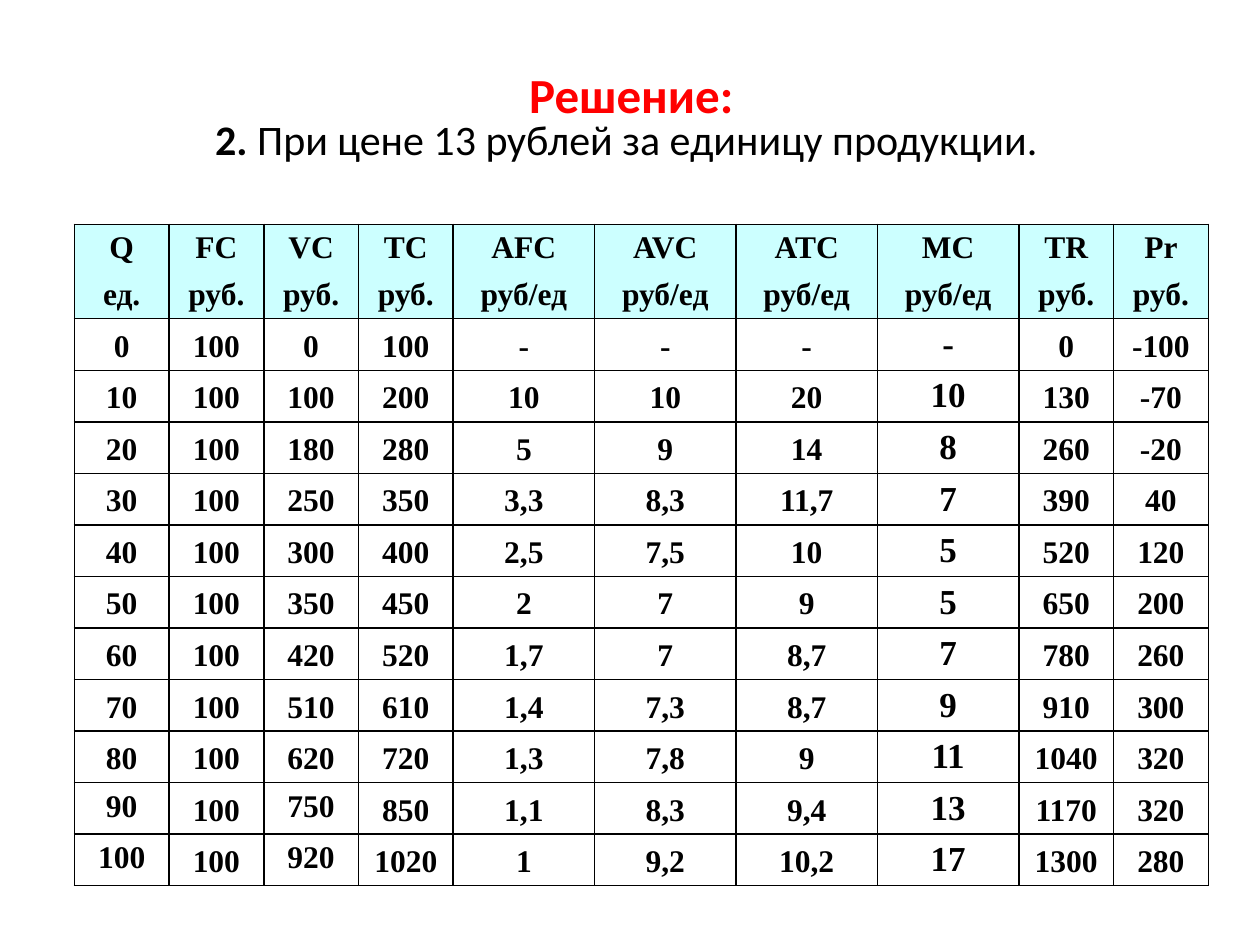
from dataclasses import dataclass

from lxml import etree
from pptx import Presentation
from pptx.dml.color import RGBColor
from pptx.enum.text import MSO_ANCHOR, PP_ALIGN
from pptx.oxml.ns import qn
from pptx.util import Inches, Pt

TOP, MIDDLE, BOTTOM = MSO_ANCHOR.TOP, MSO_ANCHOR.MIDDLE, MSO_ANCHOR.BOTTOM
CENTER = PP_ALIGN.CENTER
BLANK_LAYOUT = 6


@dataclass(frozen=True)
class Theme:
    ink: str = "000000"
    accent: str = "FF0000"
    header_fill: str = "CCFFFF"
    title_font: str = "Calibri"
    table_font: str = "Times New Roman"
    heading_size: int = 28
    subtitle_size: int = 24
    cell_size: int = 18
    emphasis_size: int = 20
    border_width: int = 1
    near_margin: float = 0.05
    far_margin: float = 0.02


HEADERS = ["Q FC VC TC AFC AVC ATC MC TR Pr".split(),
           "ед. руб. руб. руб. руб/ед руб/ед руб/ед руб/ед руб. руб.".split()]
COSTS = [line.split() for line in """
0 100 0 100 - - - - 0 -100
10 100 100 200 10 10 20 10 130 -70
20 100 180 280 5 9 14 8 260 -20
30 100 250 350 3,3 8,3 11,7 7 390 40
40 100 300 400 2,5 7,5 10 5 520 120
50 100 350 450 2 7 9 5 650 200
60 100 420 520 1,7 7 8,7 7 780 260
70 100 510 610 1,4 7,3 8,7 9 910 300
80 100 620 720 1,3 7,8 9 11 1040 320
90 100 750 850 1,1 8,3 9,4 13 1170 320
100 100 920 1020 1 9,2 10,2 17 1300 280
""".strip().splitlines()]
COLUMN_UNITS = [0.75] * 4 + [1.12] * 4 + [0.75] * 2
MARGINAL_COST = HEADERS[0].index("MC")
TOP_COLUMNS = {HEADERS[0].index(name) for name in ("Q", "VC")}
TOP_QUANTITIES = {"90", "100"}


def apply(target, values):
    for name, value in values.items():
        setattr(target, name, value)


class SlideBuilder:
    def __init__(self, presentation, theme):
        self.theme = theme
        self.slide = presentation.slides.add_slide(presentation.slide_layouts[BLANK_LAYOUT])

    def run(self, paragraph, text, font, size, color, bold=True):
        run = paragraph.add_run()
        run.text = text
        apply(run.font, {"name": font, "size": Pt(size), "bold": bold})
        run.font.color.rgb = RGBColor.from_string(color)

    def title(self, left, top, width, height, heading, number, statement):
        theme = self.theme
        shape = self.slide.shapes.add_textbox(*map(Inches, (left, top, width, height)))
        apply(shape.text_frame, {"word_wrap": True, "vertical_anchor": MIDDLE})
        paragraph = shape.text_frame.paragraphs[0]
        apply(paragraph, {"alignment": CENTER, "line_spacing": 0.8})
        self.run(paragraph, heading, theme.title_font, theme.heading_size, theme.accent)
        paragraph.add_line_break()
        for text, bold in ((number, True), (statement, False)):
            self.run(paragraph, text, theme.title_font, theme.subtitle_size, theme.ink, bold)

    def borders(self, cell, hidden):
        properties = cell._tc.get_or_add_tcPr()
        for side in "LRTB":
            line = etree.SubElement(properties, qn(f"a:ln{side}"),
                                    w=str(Pt(self.theme.border_width)))
            if side == hidden:
                etree.SubElement(line, qn("a:noFill"))
            else:
                fill = etree.SubElement(line, qn("a:solidFill"))
                etree.SubElement(fill, qn("a:srgbClr"), val=self.theme.ink)

    def cell(self, cell, text, size, anchor=BOTTOM, fill=None, hidden=None):
        self.borders(cell, hidden)
        if fill:
            cell.fill.solid()
            cell.fill.fore_color.rgb = RGBColor.from_string(fill)
        else:
            cell.fill.background()
        near, far = Inches(self.theme.near_margin), Inches(self.theme.far_margin)
        apply(cell, {"vertical_anchor": anchor,
                     "margin_top": near if anchor == TOP else far,
                     "margin_bottom": far if anchor == TOP else near})
        paragraph = cell.text_frame.paragraphs[0]
        paragraph.alignment = CENTER
        self.run(paragraph, text, self.theme.table_font, size, self.theme.ink)

    def cost_table(self, left, top, width, header_height, body_height):
        theme = self.theme
        row_count = len(HEADERS) + len(COSTS)
        frame = self.slide.shapes.add_table(
            row_count, len(COLUMN_UNITS),
            *map(Inches, (left, top, width, header_height + body_height)))
        table = frame.table
        apply(table, {"first_row": False, "horz_banding": False})
        for column, units in zip(table.columns, COLUMN_UNITS):
            column.width = Inches(width * units / sum(COLUMN_UNITS))
        heights = ([header_height / len(HEADERS)] * len(HEADERS)
                   + [body_height / len(COSTS)] * len(COSTS))
        for row, height in zip(table.rows, heights):
            row.height = Inches(height)
        for row, (labels, hidden) in enumerate(zip(HEADERS, "BT")):
            for column, label in enumerate(labels):
                self.cell(table.cell(row, column), label, theme.cell_size,
                          fill=theme.header_fill, hidden=hidden)
        for row, values in enumerate(COSTS, len(HEADERS)):
            for column, value in enumerate(values):
                raised = values[0] in TOP_QUANTITIES and column in TOP_COLUMNS
                size = theme.emphasis_size if column == MARGINAL_COST else theme.cell_size
                self.cell(table.cell(row, column), value, size, TOP if raised else BOTTOM)


def main():
    presentation = Presentation()
    apply(presentation, {"slide_width": Inches(10), "slide_height": Inches(7.5)})
    builder = SlideBuilder(presentation, Theme())
    builder.title(0.51, 0.36, 9, 1.18, "Решение:", "2. ",
                  "При цене 13 рублей за единицу продукции. ")
    builder.cost_table(0.59, 1.78, 9, 0.75, 4.5)
    presentation.save("out.pptx")


if __name__ == "__main__":
    main()
